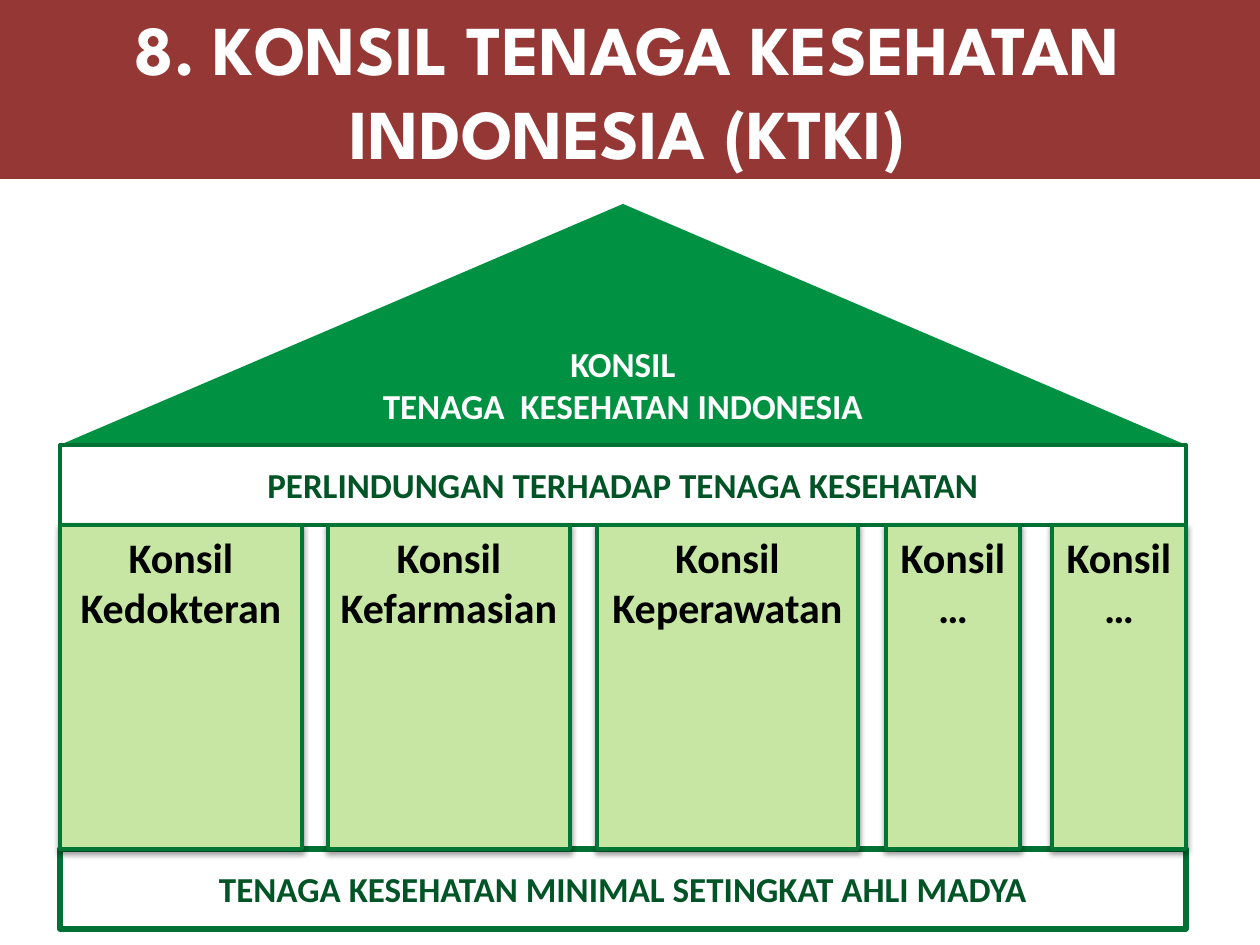
from lxml.etree import SubElement
from pptx import Presentation
from pptx.dml.color import RGBColor
from pptx.enum.shapes import MSO_SHAPE
from pptx.enum.text import MSO_ANCHOR, MSO_AUTO_SIZE, PP_ALIGN
from pptx.oxml.ns import qn
from pptx.util import Pt

PX = 914400 // 126
COLORS = {
    "banner": "953735",
    "roof": "009242",
    "beam_line": "007033",
    "beam_text": "005426",
    "pillar": "C7E6A4",
    "pillar_line": "007635",
    "white": "FFFFFF",
    "black": "000000",
}
# Pillar name, left offset within the house, width
PILLARS = [
    ("Kedokteran", 0, 242),
    ("Kefarmasian", 268, 242),
    ("Keperawatan", 537, 261),
    ("…", 826, 134),
    ("…", 992, 134),
]
ROOF_HEIGHT, BEAM_HEIGHT, PILLAR_HEIGHT = 241, 80, 324


def color(name):
    return RGBColor.from_string(COLORS[name])


def write_text(shape, *lines, size=20, font="Calibri", ink="white",
               anchor=MSO_ANCHOR.MIDDLE, margin=12):
    frame = shape.text_frame
    frame.word_wrap = True
    frame.auto_size = MSO_AUTO_SIZE.NONE
    frame.vertical_anchor = anchor
    frame.margin_left = frame.margin_right = margin * PX
    frame.text = "\n".join(lines)
    for paragraph in frame.paragraphs:
        paragraph.alignment = PP_ALIGN.CENTER
        for run in paragraph.runs:
            run.font.size = Pt(size)
            run.font.name = font
            run.font.bold = True
            run.font.color.rgb = color(ink)


def add_block(slide, box, fill, line=None, line_width=2.25, kind=MSO_SHAPE.RECTANGLE):
    shape = slide.shapes.add_shape(kind, *(length * PX for length in box))
    shape.shadow.inherit = False
    shape.fill.solid()
    shape.fill.fore_color.rgb = color(fill)
    if line:
        shape.line.color.rgb = color(line)
        shape.line.width = Pt(line_width)
    else:
        shape.line.fill.background()
    return shape


def add_soft_shadow(shape):
    effects = shape._element.spPr.find(qn("a:effectLst"))
    shadow = SubElement(effects, qn("a:outerShdw"), blurRad=str(Pt(3.1)),
                        dist=str(Pt(1.6)), dir="5400000", rotWithShape="0")
    tint = SubElement(shadow, qn("a:srgbClr"), val=COLORS["black"])
    SubElement(tint, qn("a:alpha"), val="38000")


def add_banner(slide, left, top, width, height):
    title = slide.shapes.title
    title.left, title.top = left * PX, top * PX
    title.width, title.height = width * PX, height * PX
    title.fill.solid()
    title.fill.fore_color.rgb = color("banner")
    write_text(title, "8. KONSIL TENAGA KESEHATAN INDONESIA (KTKI)",
               size=40, font="League Spartan")


def add_beam(slide, box, text, line_width):
    beam = add_block(slide, box, "white", "beam_line", line_width)
    write_text(beam, text, ink="beam_text")


def add_house(slide, left, top, width):
    beam_top = top + ROOF_HEIGHT
    pillar_top = beam_top + BEAM_HEIGHT
    base_top = pillar_top + PILLAR_HEIGHT

    # Roof
    roof = add_block(slide, (left, top, width, ROOF_HEIGHT), "roof",
                     kind=MSO_SHAPE.ISOSCELES_TRIANGLE)
    write_text(roof, "KONSIL", "TENAGA  KESEHATAN INDONESIA")

    # Beam and base
    add_beam(slide, (left, beam_top, width, BEAM_HEIGHT),
             "PERLINDUNGAN TERHADAP TENAGA KESEHATAN", 2.25)
    add_beam(slide, (left, base_top, width, BEAM_HEIGHT),
             "TENAGA KESEHATAN MINIMAL SETINGKAT AHLI MADYA", 3)

    # Pillars
    for name, offset, pillar_width in PILLARS:
        pillar = add_block(slide, (left + offset, pillar_top, pillar_width, PILLAR_HEIGHT),
                           "pillar", "pillar_line")
        add_soft_shadow(pillar)
        write_text(pillar, "Konsil", name, size=24, ink="black",
                   anchor=MSO_ANCHOR.TOP, margin=4)


def main():
    presentation = Presentation()
    presentation.slide_width, presentation.slide_height = 1260 * PX, 945 * PX
    slide = presentation.slides.add_slide(presentation.slide_layouts[5])
    add_banner(slide, -5, 0, 1265, 179)
    add_house(slide, 60, 204, 1126)
    presentation.save("out.pptx")


if __name__ == "__main__":
    main()
